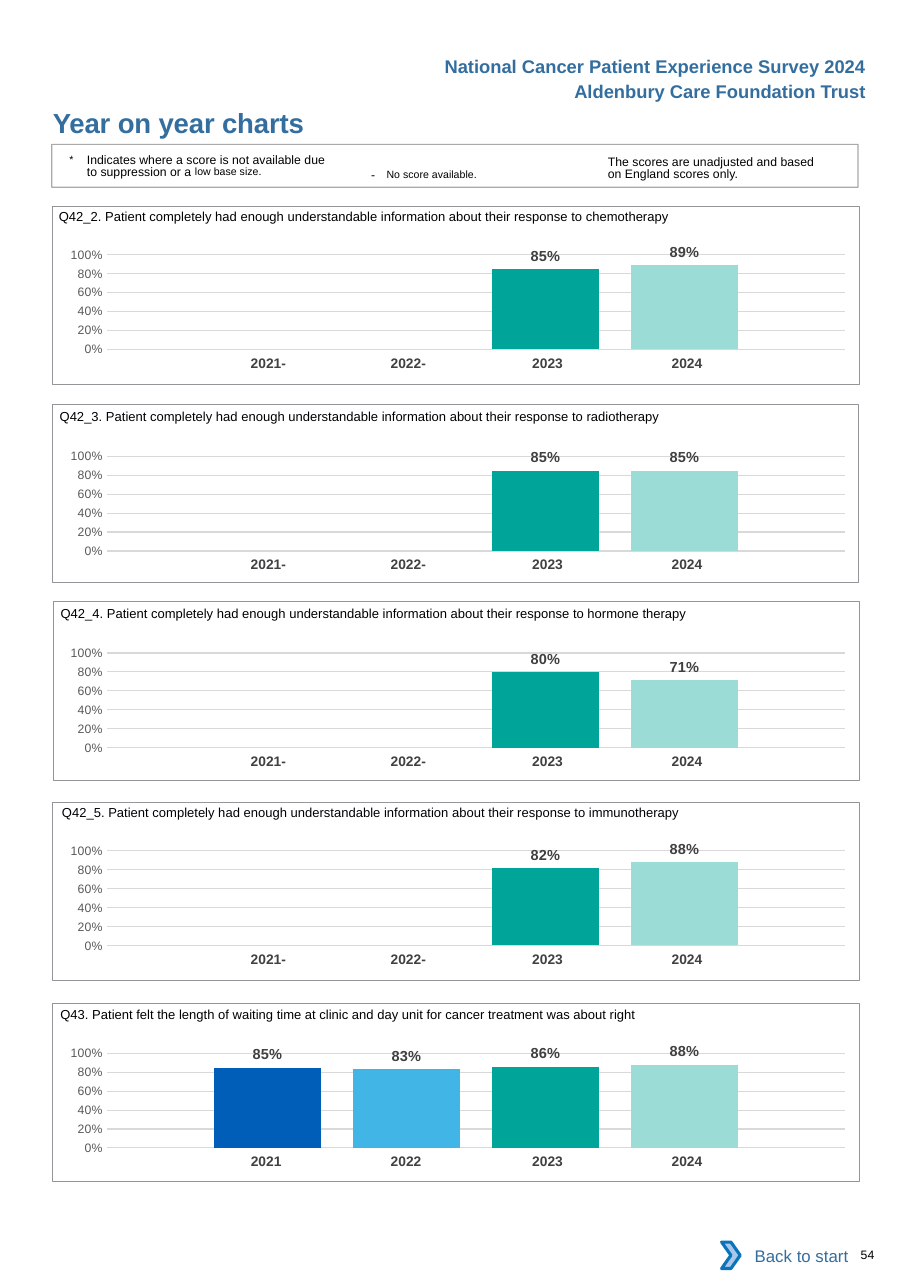
from collections import namedtuple

from lxml.etree import SubElement
from pptx import Presentation
from pptx.chart.data import CategoryChartData
from pptx.dml.color import RGBColor
from pptx.enum.chart import XL_CHART_TYPE as ChartType, XL_LABEL_POSITION as LabelPosition
from pptx.enum.chart import XL_TICK_MARK as TickMark
from pptx.enum.shapes import MSO_SHAPE as Preset
from pptx.enum.text import MSO_ANCHOR as Anchor, PP_ALIGN as Align
from pptx.oxml import parse_xml
from pptx.oxml.ns import nsdecls, qn
from pptx.util import Pt

COLORS = {"heading": "336E9F", "text": "000000", "year": "414042", "axis": "595959",
          "label": "404040", "grid": "D9D9D9", "frame": "939598", "white": "FFFFFF",
          "arrow": "A8C7E9", "arrow_edge": "0A74BB"}
YEAR_COLORS = {2021: "005EB8", 2022: "41B6E6", 2023: "00A499", 2024: "9CDCD7"}
YEAR_WIDTHS = [91.44, 91.44, 96.48, 91.44]
YEAR_RIGHT_INSETS = [0, 0, 2.9, 8.6]
NO_STYLE = "{2D5ABB26-0587-4C30-8999-92F81FD0307C}"

Box = namedtuple("Box", "left top width height")
# Each title_at and chart_top is measured from the corner of the panel's frame.
Panel = namedtuple("Panel", "left top title_at chart_top question scores")

RESPONSE = "Patient completely had enough understandable information about their response to "
PANELS = [
    Panel(34.5, 134.6, (4, -5), 18.3, "Q42_2. " + RESPONSE + "chemotherapy",
          [None, None, 0.85, 0.89]),
    Panel(34, 264.2, (5, -4), 20.6, "Q42_3. " + RESPONSE + "radiotherapy",
          [None, None, 0.85, 0.85]),
    Panel(34.7, 393.1, (4.9, -4), 20.2, "Q42_4. " + RESPONSE + "hormone therapy",
          [None, None, 0.80, 0.71]),
    Panel(34.5, 524.2, (6, -5), 18.4, "Q42_5. " + RESPONSE + "immunotherapy",
          [None, None, 0.82, 0.88]),
    Panel(34.5, 655.6, (5, -4.5), 19.3, "Q43. Patient felt the length of waiting time at clinic "
          "and day unit for cancer treatment was about right", [0.85, 0.83, 0.86, 0.88]),
]


def rgb(name):
    return RGBColor.from_string(COLORS.get(name, name))


def style_font(font, size, color, bold=False):
    font.name, font.size, font.bold = "Arial", Pt(size), bold
    font.color.rgb = rgb(color)


def write_text(frame, runs, size=8, color="text", bold=False, align=Align.LEFT,
               anchor=Anchor.TOP, insets=(0, 0, 0, 0), line_spacing=None, hanging=0):
    """Fill a frame with one paragraph; runs is a string or (text, size, baseline, spacing) tuples."""
    frame.word_wrap = True
    frame.vertical_anchor = anchor
    set_insets(frame, insets)
    para = frame.paragraphs[0]
    para.alignment = align
    if line_spacing:
        para.line_spacing = Pt(line_spacing)
    if hanging:
        properties = para._p.get_or_add_pPr()
        properties.set("marL", str(Pt(hanging)))
        properties.set("indent", str(-Pt(hanging)))
    if isinstance(runs, str):
        runs = [(runs, size, 0, 0)]
    for text, run_size, baseline, spacing in runs:
        span = para.add_run()
        span.text = text
        style_font(span.font, run_size, color, bold)
        if baseline:
            span._r.get_or_add_rPr().set("baseline", str(baseline * 1000))
        if spacing:
            span._r.get_or_add_rPr().set("spc", str(int(spacing * 100)))


def set_insets(holder, insets):
    holder.margin_left, holder.margin_top, holder.margin_right, holder.margin_bottom = map(Pt, insets)


def add_text(shapes, box, runs, **options):
    write_text(shapes.add_textbox(*map(Pt, box)).text_frame, runs, **options)


def add_preset(shapes, preset, box, fill=None, line=None, width=0.5):
    shape = shapes.add_shape(preset, *map(Pt, box))
    shape.shadow.inherit = False
    if fill:
        shape.fill.solid()
        shape.fill.fore_color.rgb = rgb(fill)
    else:
        shape.fill.background()
    if line:
        shape.line.color.rgb = rgb(line)
        shape.line.width = Pt(width)
    else:
        shape.line.fill.background()
    return shape


def add_headings(page, box):
    for row, text in enumerate(["National Cancer Patient Experience Survey 2024",
                                "Aldenbury Care Foundation Trust"]):
        add_text(page.shapes, Box(box.left, box.top + row * 16.1, box.width, 21.6), text,
                 size=12, color="heading", bold=True, align=Align.RIGHT, insets=(7.2, 3.6, 7.2, 3.6))
    title = page.shapes.title
    title.left, title.top, title.width, title.height = map(Pt, (34.5, box.top + 36.8, 324, 21.6))
    write_text(title.text_frame, [("Year on year charts", 18, 0, -0.1)], color="heading", bold=True)


def add_notes_box(page, box):
    shapes = page.shapes.add_group_shape().shapes
    add_text(shapes, Box(box.left + 363.5, box.top + 5.6, 144, 19.5),
             "The scores are unadjusted and based on England scores only.",
             insets=(0, 2.2, 0, 0), line_spacing=8.1)
    add_text(shapes, Box(box.left + 201.6, box.top + 7.5, 132, 17.3),
             [("- ", 8, 0, 2.6), ("No score available.", 12, 3, 0)], insets=(7.2, 3.6, 7.2, 3.6))
    add_text(shapes, Box(box.left + 11.5, box.top + 5.1, 172, 19.5),
             [("*\t", 12, 3, 0),
              ("Indicates where a score is not available due to suppression or a ", 8, 0, 0),
              ("low base size.", 12, 7, 0)],
             insets=(0, 2.2, 0, 0), line_spacing=8.1, hanging=11.5)
    frame = add_preset(shapes, Preset.RECTANGLE, box, line="frame", width=0.75)
    line_color = frame.line._ln.find(".//" + qn("a:srgbClr"))
    SubElement(line_color, qn("a:alpha")).set("val", "80000")


def add_year_table(page, box, scores):
    table = page.shapes.add_table(1, len(scores), *map(Pt, box)).table
    table.first_row = table.horz_banding = False
    table._tbl.tblPr.find(qn("a:tableStyleId")).text = NO_STYLE
    table.rows[0].height = Pt(box.height)
    for column, (year, score) in enumerate(zip(YEAR_COLORS, scores)):
        table.columns[column].width = Pt(YEAR_WIDTHS[column])
        cell = table.cell(0, column)
        cell.fill.background()
        missing = score is None
        write_text(cell.text_frame, f"{year}-" if missing else str(year), size=9,
                   color="year", bold=True, align=Align.CENTER)
        cell.vertical_anchor = Anchor.TOP
        set_insets(cell, (10.1 if missing else 7.2, 3.6, YEAR_RIGHT_INSETS[column], 3.6))


def add_score_chart(page, box, scores):
    data = CategoryChartData(number_format="0%")
    data.categories = ["1"]
    for number, score in enumerate(scores, 1):
        data.add_series(f"Series {number}", [score])
    chart = page.shapes.add_chart(ChartType.COLUMN_CLUSTERED, *map(Pt, box), data).chart
    chart.has_legend = chart.has_title = False
    chart.font.name, chart.font.size = "Calibri", Pt(10)
    chart.font.color.rgb = rgb("text")
    chart.category_axis.visible = False

    axis = chart.value_axis
    axis.minimum_scale, axis.maximum_scale, axis.major_unit = 0, 1, 0.2
    axis.major_tick_mark = axis.minor_tick_mark = TickMark.NONE
    axis.format.line.fill.background()
    axis.major_gridlines.format.line.color.rgb = rgb("grid")
    axis.major_gridlines.format.line.width = Pt(0.75)
    axis.tick_labels.number_format, axis.tick_labels.number_format_is_linked = "0%", False
    style_font(axis.tick_labels.font, 8, "axis")

    plot = chart.plots[0]
    plot.gap_width, plot.overlap, plot.vary_by_categories = 200, -30, False
    for series, color in zip(plot.series, YEAR_COLORS.values()):
        series.format.fill.solid()
        series.format.fill.fore_color.rgb = rgb(color)
        labels = series.data_labels
        labels.show_value, labels.position = True, LabelPosition.OUTSIDE_END
        labels.number_format, labels.number_format_is_linked = "0%", False
        style_font(labels.font, 9.5, "label", bold=True)
    place_plot(chart, x=0.079, y=0.145, w=0.915, h=0.666)


def place_plot(chart, **fractions):
    """Fix the inner plot area as fractions of the chart's size."""
    area = chart._chartSpace.chart.plotArea
    for layout in area.findall(qn("c:layout")):
        area.remove(layout)
    modes = "".join(f'<c:{side}Mode val="edge"/>' for side in "xy")
    sizes = "".join(f'<c:{side} val="{value}"/>' for side, value in fractions.items())
    area.insert(0, parse_xml(f'<c:layout {nsdecls("c")}><c:manualLayout><c:layoutTarget val="inner"/>'
                             f'{modes}{sizes}</c:manualLayout></c:layout>'))


def add_panel(page, panel):
    chart_box = Box(28.4, panel.top + panel.chart_top, 527, 92.9)
    shift_x, shift_y = panel.title_at
    add_text(page.shapes, Box(panel.left + shift_x, panel.top + shift_y, 515, 17.3),
             panel.question, size=8.5, insets=(0, 6.5, 0, 0))
    add_year_table(page, Box(124.6, chart_box.top + 75.9, sum(YEAR_WIDTHS), 19.4), panel.scores)
    add_score_chart(page, chart_box, panel.scores)
    add_preset(page.shapes, Preset.RECTANGLE, Box(panel.left, panel.top, 527, 116.6), line="frame")


def add_footer(page, box):
    add_text(page.shapes, Box(box.left + 85.9, box.top + 10.1, 24, 9.4), "54")
    shapes = page.shapes.add_group_shape().shapes
    button = add_preset(shapes, Preset.RECTANGLE, Box(box.left, box.top, 85, 30.2), fill="white")
    write_text(button.text_frame, "Back to start", size=11, color="heading", align=Align.RIGHT,
               anchor=Anchor.MIDDLE, insets=(7.2, 3.6, 7.2, 3.6))
    add_preset(shapes, Preset.CHEVRON, Box(box.left - 5, box.top + 6.5, 12.2, 17.3),
               fill="arrow", line="arrow_edge", width=2)


def main():
    deck = Presentation()
    deck.slide_width, deck.slide_height = Pt(594.72), Pt(841.68)
    page = deck.slides.add_slide(deck.slide_layouts[5])
    add_headings(page, Box(253, 32.5, 320.1, 38))
    for panel in PANELS:
        add_panel(page, panel)
    add_notes_box(page, Box(33.8, 94.3, 527, 28.1))
    add_footer(page, Box(476.6, 805.2, 110, 30.2))
    deck.save("out.pptx")


if __name__ == "__main__":
    main()
